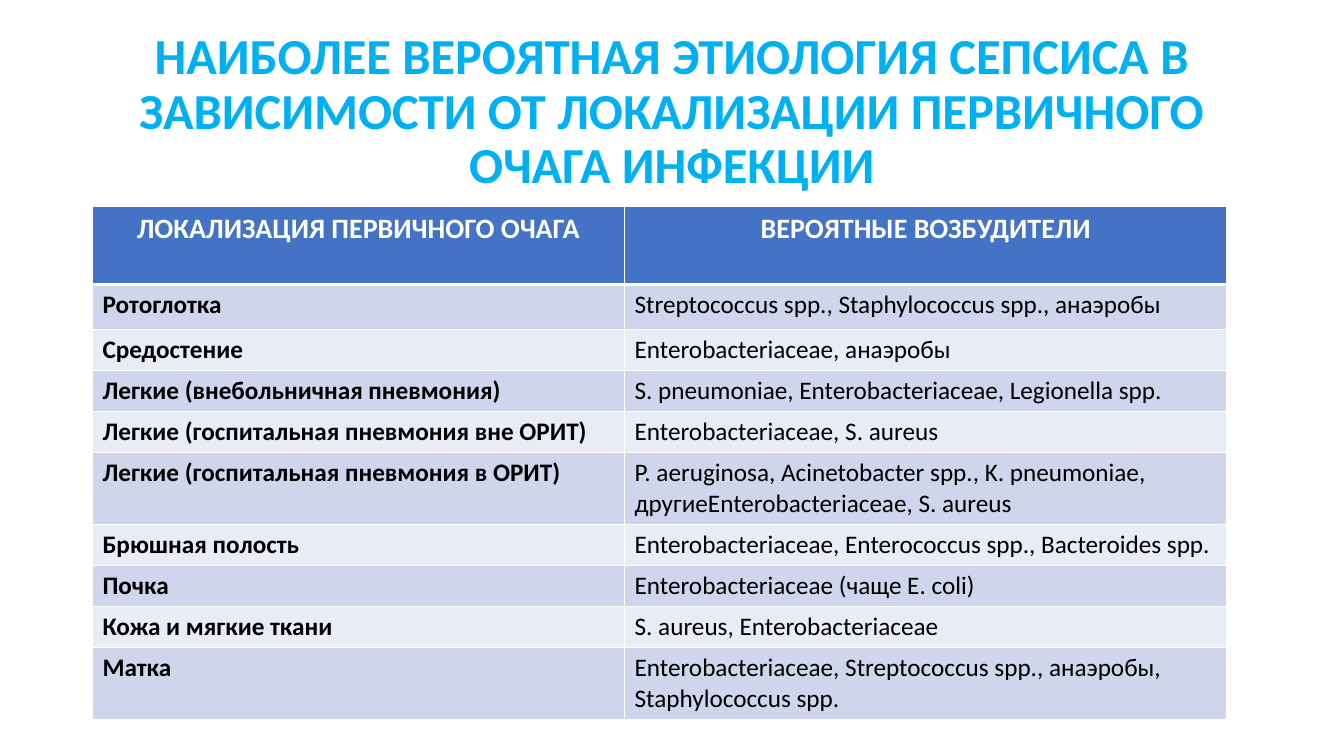
import lxml.etree
import pptx
import pptx.dml.color
import pptx.enum.text
import pptx.oxml.ns
import pptx.util

COLORS = {
    "title": "00B0F0",
    "header": "4472C4",
    "odd": "CFD5EA",
    "even": "E9EBF5",
    "white": "FFFFFF",
    "black": "000000",
}

TITLE = ("НАИБОЛЕЕ ВЕРОЯТНАЯ ЭТИОЛОГИЯ СЕПСИСА В ЗАВИСИМОСТИ "
         "ОТ ЛОКАЛИЗАЦИИ ПЕРВИЧНОГО ОЧАГА ИНФЕКЦИИ")

PATHOGENS = [
    ("ЛОКАЛИЗАЦИЯ ПЕРВИЧНОГО ОЧАГА", "ВЕРОЯТНЫЕ ВОЗБУДИТЕЛИ"),
    ("Ротоглотка", "Streptococcus spp., Staphylococcus spp., анаэробы"),
    ("Средостение", "Enterobacteriaceae, анаэробы"),
    ("Легкие (внебольничная пневмония)",
     "S. pneumoniae, Enterobacteriaceae, Legionella spp."),
    ("Легкие (госпитальная пневмония вне ОРИТ)", "Enterobacteriaceae, S. aureus"),
    ("Легкие (госпитальная пневмония в ОРИТ)",
     "P. aeruginosa, Acinetobacter spp., K. pneumoniae, "
     "другиеEnterobacteriaceae, S. aureus"),
    ("Брюшная полость", "Enterobacteriaceae, Enterococcus spp., Bacteroides spp."),
    ("Почка", "Enterobacteriaceae (чаще E. coli)"),
    ("Кожа и мягкие ткани", "S. aureus, Enterobacteriaceae"),
    ("Матка",
     "Enterobacteriaceae, Streptococcus spp., анаэробы, Staphylococcus spp."),
]

COLUMN_WIDTHS = [13.41, 15.18]
ROW_HEIGHTS = [1.96, 1.14] + [1.03] * 3 + [1.82] + [1.03] * 3 + [1.82]


class SlideBuilder:
    """Holds the style and the current slide and adds its elements."""

    def __init__(self, presentation, font="Calibri"):
        self.font = font
        self.slide = presentation.slides.add_slide(presentation.slide_layouts[5])

    def color(self, name):
        return pptx.dml.color.RGBColor.from_string(COLORS[name])

    def add_run(self, paragraph, text, size, color, bold):
        run = paragraph.add_run()
        run.text = text
        run.font.name = self.font
        run.font.size = pptx.util.Pt(size)
        run.font.bold = bold
        run.font.color.rgb = self.color(color)

    def add_title(self, text, left, top, width, height):
        title = self.slide.shapes.title
        title.left, title.top = pptx.util.Cm(left), pptx.util.Cm(top)
        title.width, title.height = pptx.util.Cm(width), pptx.util.Cm(height)
        frame = title.text_frame
        frame.word_wrap = True
        frame.auto_size = pptx.enum.text.MSO_AUTO_SIZE.NONE
        frame.vertical_anchor = pptx.enum.text.MSO_ANCHOR.MIDDLE
        paragraph = frame.paragraphs[0]
        paragraph.alignment = pptx.enum.text.PP_ALIGN.CENTER
        paragraph.line_spacing = 0.9
        self.add_run(paragraph, text, 36, "title", True)

    def add_border(self, cell, side, points):
        qn = pptx.oxml.ns.qn
        properties = cell._tc.get_or_add_tcPr()
        line = lxml.etree.SubElement(properties, qn(f"a:ln{side}"),
                                     w=str(pptx.util.Pt(points)))
        fill = lxml.etree.SubElement(line, qn("a:solidFill"))
        lxml.etree.SubElement(fill, qn("a:srgbClr"), val=COLORS["white"])

    def fill_cell(self, cell, text, row, column):
        header = row == 0
        borders = {"L": 1, "R": 1, "T": 3 if row == 1 else 1, "B": 3 if header else 1}
        for side, points in borders.items():
            self.add_border(cell, side, points)
        cell.fill.solid()
        background = "header" if header else ("odd" if row % 2 else "even")
        cell.fill.fore_color.rgb = self.color(background)
        paragraph = cell.text_frame.paragraphs[0]
        if header:
            paragraph.alignment = pptx.enum.text.PP_ALIGN.CENTER
            self.add_run(paragraph, text, 20, "white", True)
        else:
            self.add_run(paragraph, text, 18, "black", column == 0)

    def add_table(self, rows, left, top, widths, heights):
        lengths = [pptx.util.Cm(value) for value in (left, top, sum(widths), sum(heights))]
        table = self.slide.shapes.add_table(len(rows), len(widths), *lengths).table
        for column, width in zip(table.columns, widths):
            column.width = pptx.util.Cm(width)
        for row, height in zip(table.rows, heights):
            row.height = pptx.util.Cm(height)
        for row, texts in enumerate(rows):
            for column, text in enumerate(texts):
                self.fill_cell(table.cell(row, column), text, row, column)


def main():
    presentation = pptx.Presentation()
    presentation.slide_width = pptx.util.Cm(33.87)
    presentation.slide_height = pptx.util.Cm(19.05)
    builder = SlideBuilder(presentation)
    builder.add_title(TITLE, 2.33, 1.01, 29.21, 3.68)
    builder.add_table(PATHOGENS, 2.33, 5.21, COLUMN_WIDTHS, ROW_HEIGHTS)
    presentation.save("out.pptx")


if __name__ == "__main__":
    main()
